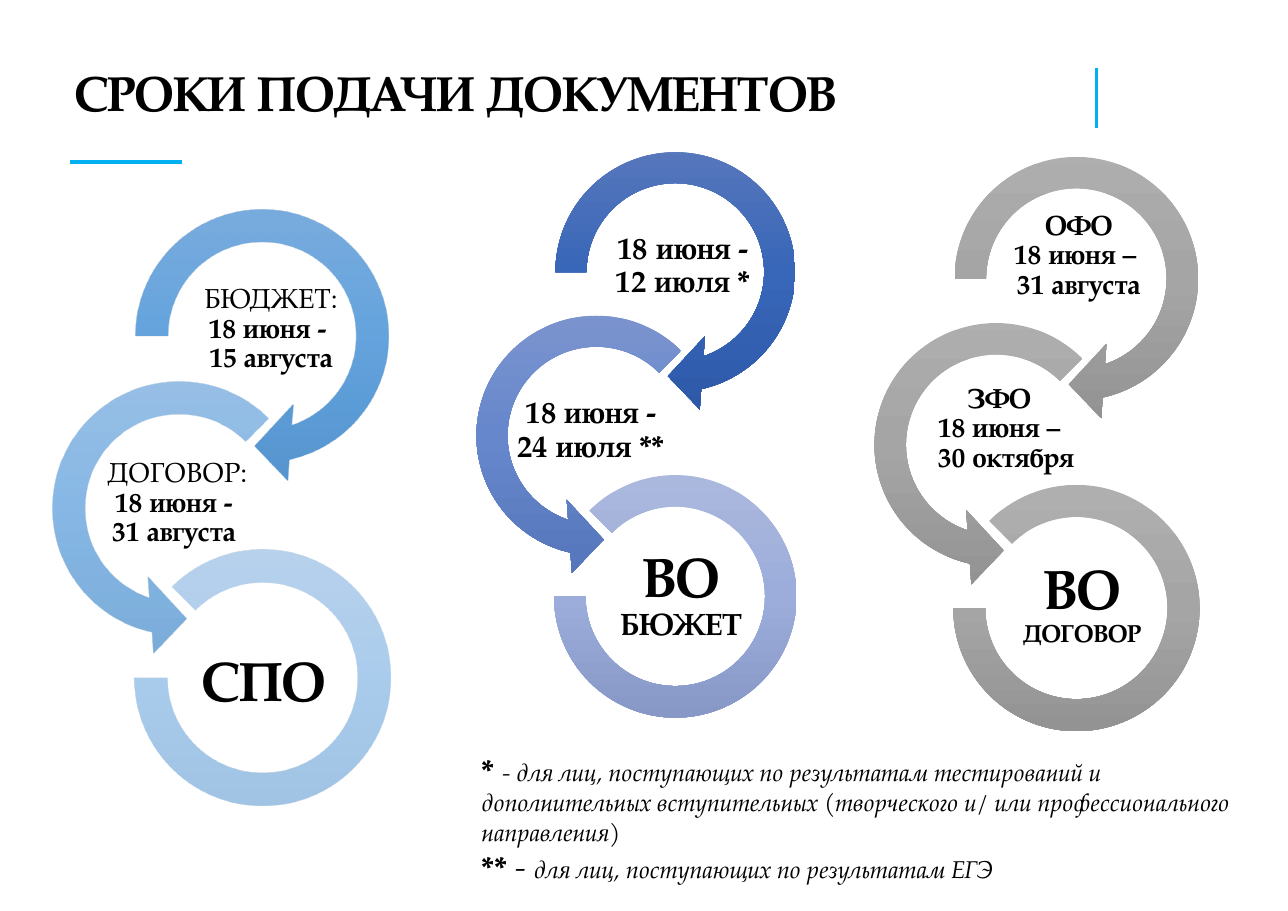
"""Builds the slide with the document submission deadlines."""
from lxml import etree
from pptx import Presentation
from pptx.dml.color import RGBColor
from pptx.enum.shapes import MSO_CONNECTOR, MSO_SHAPE
from pptx.enum.text import MSO_ANCHOR, PP_ALIGN
from pptx.oxml.ns import qn
from pptx.util import Inches, Pt

STRAIGHT = MSO_CONNECTOR.STRAIGHT
RIGHT_ARROW = MSO_SHAPE.CIRCULAR_ARROW
LEFT_ARROW = MSO_SHAPE.LEFT_CIRCULAR_ARROW
ARC = MSO_SHAPE.BLOCK_ARC
MIDDLE = MSO_ANCHOR.MIDDLE
TOP = MSO_ANCHOR.TOP
CENTER = PP_ALIGN.CENTER
LEFT = PP_ALIGN.LEFT

FONT = "TeX Gyre Pagella"
COLORS = {
    "text": "000000",
    "accent": "00B0F0",
    "sky": ("71A6DB", "559BDB", "448ACA"),
    "navy": ("5C7ABD", "3866B8", "2D59A8"),
    "blue": ("7E96CE", "6787CC", "5676BB"),
    "lavender": ("ABB8DD", "9CADDB", "8798C6"),
    "gray": ("AFAFAF", "A5A5A5", "939393"),
}

RINGS = [
    (RIGHT_ARROW, 0, 0, 1, (0.11, 11.42, 45, 108, 0.13)),
    (LEFT_ARROW, -0.28, 0.58, 1, (0.11, 11.42, 63, 189, 0.13)),
    (ARC, 0.07, 1.22, 0.86, (135, 108, 0.13)),
]

CHAINS = [
    {
        "at": (1.03, 1.7), "size": 2.7,
        "fills": [("sky", 90), ("sky", 70), ("sky", 50)],
        "labels": [
            (1.71, 2.61, 1.5, [("БЮДЖЕТ:", 18, False), ("18 июня - ", 18, True), ("15 августа", 18, True)]),
            (0.86, 4.19, 1.5, [("ДОГОВОР:", 18, False), ("18 июня - ", 18, True), ("31 августа ", 18, True)]),
            (1.64, 5.83, 1.5, [("СПО", 36, True)]),
        ],
    },
    {
        "at": (4.85, 1.19), "size": 2.56,
        "fills": [("navy", 100), ("blue", 100), ("lavender", 100)],
        "labels": [
            (5.49, 2.06, 1.42, [("18 июня -", 20, True), ("12 июля *", 20, True)]),
            (4.54, 3.55, 1.72, [("18 июня - ", 20, True), ("24 июля ** ", 20, True)]),
            (5.47, 5.05, 1.42, [("ВО", 36, True), ("БЮЖЕТ", 20, True)]),
        ],
    },
    {
        "at": (8.47, 1.23), "size": 2.6,
        "fills": [("gray", 100)] * 3,
        "labels": [
            (9.07, 1.96, 1.44, [("ОФО", 18, True), ("18 июня – ", 18, True), ("31 августа", 18, True)]),
            (8.23, 3.53, 1.74, [("ЗФО ", 18, True), ("18 июня – ", 18, True), (" 30 октября", 18, True)]),
            (9.1, 5.13, 1.44, [("ВО", 36, True), ("ДОГОВОР", 16, True)]),
        ],
    },
]

FOOTNOTES = [
    [("*", 20, True), (" ", 21, False),
     ("- для лиц, поступающих по результатам тестирований и дополнительных вступительных "
      "(творческого и/ или профессионального направления)", 16, False)],
    [("**", 20, True), (" - ", 21, False), ("для лиц, поступающих по результатам ЕГЭ", 16, False)],
]


class DeadlineSlide:
    """Holds the style and the current slide."""

    def __init__(self, slide):
        self.slide = slide

    def line(self, start, end, width):
        """Draws an accent line."""
        connector = self.slide.shapes.add_connector(STRAIGHT, *map(Inches, start + end))
        connector.line.color.rgb = RGBColor.from_string(COLORS["accent"])
        connector.line.width = Pt(width)
        etree.SubElement(connector._element.spPr, qn("a:effectLst"))

    def text_box(self, left, top, width, height, anchor, inset):
        """Adds an empty wrapped text box and returns its text frame."""
        box = self.slide.shapes.add_textbox(*map(Inches, (left, top, width, height)))
        frame = box.text_frame
        frame.word_wrap = True
        frame.vertical_anchor = anchor
        if inset is not None:
            frame.margin_left = frame.margin_right = Inches(inset)
            frame.margin_top = frame.margin_bottom = Inches(inset)
        return frame

    def paragraph(self, frame, index, alignment):
        """Returns a styled paragraph of the frame."""
        paragraph = frame.add_paragraph() if index else frame.paragraphs[0]
        paragraph.alignment = alignment
        paragraph.font.name = FONT
        paragraph.font.color.rgb = RGBColor.from_string(COLORS["text"])
        return paragraph

    def label(self, left, top, width, height, lines, inset=0.01):
        """Writes centred lines, each with its own size and weight."""
        frame = self.text_box(left, top, width, height, MIDDLE, inset)
        for index, (text, size, bold) in enumerate(lines):
            paragraph = self.paragraph(frame, index, CENTER)
            paragraph.line_spacing = 0.9
            paragraph.font.size = Pt(size)
            paragraph.font.bold = bold
            paragraph.add_run().text = text

    def footnotes(self, left, top, width, height, notes):
        """Writes notes with a bold mark and italic wording."""
        frame = self.text_box(left, top, width, height, TOP, None)
        for index, runs in enumerate(notes):
            paragraph = self.paragraph(frame, index, LEFT)
            for text, size, is_mark in runs:
                run = paragraph.add_run()
                run.text = text
                run.font.size = Pt(size)
                run.font.bold = is_mark
                run.font.italic = not is_mark

    def ring(self, kind, left, top, size, adjustments, colors, opacity):
        """Draws a ring shape with a vertical three-colour gradient."""
        shape = self.slide.shapes.add_shape(kind, *map(Inches, (left, top, size, size)))
        for index, value in enumerate(adjustments):
            shape.adjustments[index] = value
        shape.shadow.inherit = False
        shape.line.fill.background()
        shape.fill.gradient()
        shape.fill.gradient_angle = 270
        stops = shape._element.spPr.find(".//" + qn("a:gsLst"))
        for stop in list(stops):
            stops.remove(stop)
        for position, color in zip((0, 50, 100), colors):
            stop = etree.SubElement(stops, qn("a:gs"), pos=str(position * 1000))
            fill = etree.SubElement(stop, qn("a:srgbClr"), val=color)
            etree.SubElement(fill, qn("a:alpha"), val=str(opacity * 1000))

    def chain(self, at, size, fills, labels):
        """Draws three linked rings and their labels."""
        left, top = at
        for (kind, right, down, scale, adjustments), (color, opacity) in zip(RINGS, fills):
            self.ring(kind, left + right * size, top + down * size, scale * size,
                      adjustments, COLORS[color], opacity)
        for label_left, label_top, width, lines in labels:
            self.label(label_left, label_top, width, 0.28 * size, lines)


def main():
    """Builds and saves the presentation."""
    presentation = Presentation()
    presentation.slide_width = Inches(11.69)
    presentation.slide_height = Inches(8.27)
    page = DeadlineSlide(presentation.slides.add_slide(presentation.slide_layouts[6]))
    page.line((0.64, 1.47), (1.65, 1.47), 3)
    page.line((9.95, 0.62), (9.95, 1.16), 2.25)
    page.label(0.3, 0.43, 7.67, 0.88, [("СРОКИ ПОДАЧИ ДОКУМЕНТОВ", 32, True)], 0.05)
    for chain in CHAINS:
        page.chain(**chain)
    page.footnotes(4.27, 6.75, 7.42, 1.35, FOOTNOTES)
    presentation.save("out.pptx")


if __name__ == "__main__":
    main()
